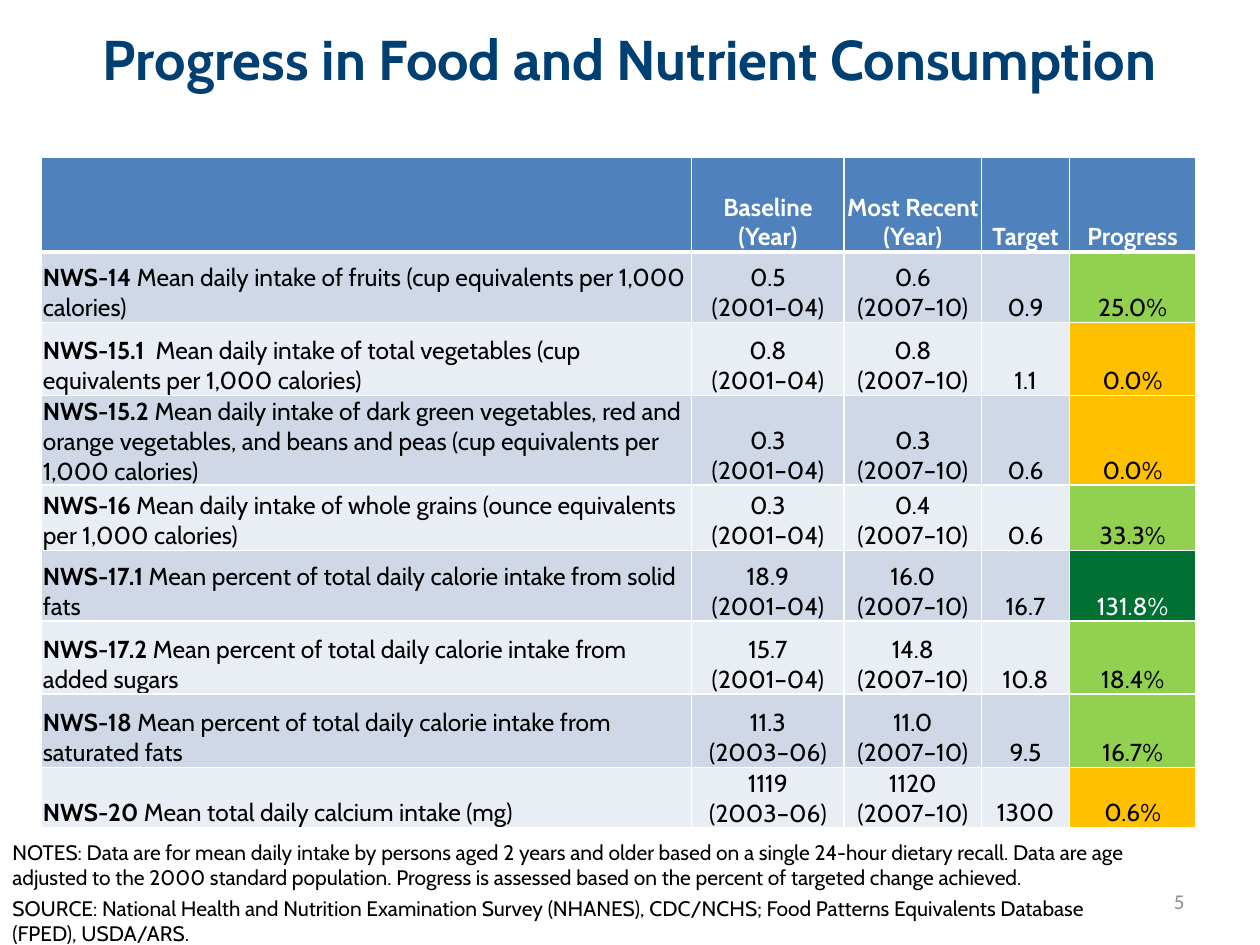
from lxml.etree import SubElement
from pptx import Presentation
from pptx.dml.color import RGBColor
from pptx.enum.text import MSO_ANCHOR, PP_ALIGN
from pptx.oxml.ns import qn
from pptx.util import Inches, Pt

WHITE, BLACK, NAVY, GRAY = "FFFFFF", "000000", "003F72", "8C8C8C"
HEADER_FILL, BANDS = "4F81BD", ("D0D8E8", "E9EDF4")
MET, IMPROVING, LITTLE_CHANGE = "007033", "92D050", "FFC000"

HEADINGS = ["", "Baseline (Year)", "Most Recent (Year)", "Target", "Progress"]
COLUMN_WIDTHS = [5.16, 1.21, 1.09, 0.7, 1]
ROW_HEIGHTS = [0.75, 0.56, 0.58, 0.71, 0.52, 0.56, 0.58, 0.58, 0.48]
RECENT_YEARS = "2007–10"
OBJECTIVES = [
    ("NWS-14", " Mean daily intake of fruits (cup equivalents per 1,000 calories)",
     "0.5", "2001–04", "0.6", "0.9", 25.0),
    ("NWS-15.1 ", " Mean daily intake of total vegetables (cup equivalents per 1,000 calories)",
     "0.8", "2001–04", "0.8", "1.1", 0.0),
    ("NWS-15.2 ", "Mean daily intake of dark green vegetables, red and orange vegetables, "
     "and beans and peas (cup equivalents per 1,000 calories)",
     "0.3", "2001–04", "0.3", "0.6", 0.0),
    ("NWS-16", " Mean daily intake of whole grains (ounce equivalents per 1,000 calories)",
     "0.3", "2001–04", "0.4", "0.6", 33.3),
    ("NWS-17.1", " Mean percent of total daily calorie intake from solid fats",
     "18.9", "2001–04", "16.0", "16.7", 131.8),
    ("NWS-17.2 ", "Mean percent of total daily calorie intake from added sugars",
     "15.7", "2001–04", "14.8", "10.8", 18.4),
    ("NWS-18", " Mean percent of total daily calorie intake from saturated fats",
     "11.3", "2003–06", "11.0", "9.5", 16.7),
    ("NWS-20", " Mean total daily calcium intake (mg)",
     "1119", "2003–06", "1120", "1300", 0.6),
]
NOTES = ("NOTES: Data are for mean daily intake by persons aged 2 years and older based on "
         "a single 24-hour dietary recall. Data are age adjusted to the 2000 standard "
         "population. Progress is assessed based on the percent of targeted change achieved.")
SOURCE = ("SOURCE: National Health and Nutrition Examination Survey (NHANES), CDC/NCHS; "
          "Food Patterns Equivalents Database (FPED), USDA/ARS.")


def color(value):
    return RGBColor.from_string(value)


def progress_fill(percent):
    if percent >= 100:
        return MET
    return IMPROVING if percent >= 10 else LITTLE_CHANGE


class SlideBuilder:
    font_name = "Cabin"

    def __init__(self, page):
        self.page = page

    def style(self, font, size, ink, bold=False, name=None):
        font.name = name or self.font_name
        font.size = Pt(size)
        font.bold = bold
        font.color.rgb = color(ink)

    def text(self, words, place, size, ink=BLACK, bold=False, name=None,
             align=PP_ALIGN.LEFT, anchor=MSO_ANCHOR.TOP):
        box = self.page.shapes.add_textbox(*map(Inches, place))
        frame = box.text_frame
        frame.word_wrap = True
        frame.vertical_anchor = anchor
        para = frame.paragraphs[0]
        para.text = words
        para.alignment = align
        self.style(para.font, size, ink, bold, name)

    def table(self, place, widths, heights):
        table = self.page.shapes.add_table(
            len(heights), len(widths), *map(Inches, place)).table
        for column, width in zip(table.columns, widths):
            column.width = Inches(width)
        for row, height in zip(table.rows, heights):
            row.height = Inches(height)
        return table

    def cell(self, cell, lines, fill, ink=BLACK, bold=False,
             align=PP_ALIGN.CENTER, top=1, bottom=1):
        cell.margin_left = cell.margin_right = cell.margin_top = Inches(0.01)
        cell.margin_bottom = 0
        cell.vertical_anchor = MSO_ANCHOR.BOTTOM
        self.borders(cell, top, bottom)
        cell.fill.solid()
        cell.fill.fore_color.rgb = color(fill)
        frame = cell.text_frame
        for index, line in enumerate(lines):
            para = frame.add_paragraph() if index else frame.paragraphs[0]
            para.text = line
            para.alignment = align
            self.style(para.font, 14, ink, bold)

    def label(self, cell, code, description, fill, top):
        self.cell(cell, [""], fill, align=PP_ALIGN.LEFT, top=top)
        para = cell.text_frame.paragraphs[0]
        for words, bold in ((code, True), (description, False)):
            span = para.add_run()
            span.text = words
            span.font.bold = bold

    def borders(self, cell, top, bottom):
        properties = cell._tc.get_or_add_tcPr()
        for side, width in (("L", 1), ("R", 1), ("T", top), ("B", bottom)):
            line = SubElement(properties, qn(f"a:ln{side}"), w=str(Pt(width)))
            paint = SubElement(line, qn("a:solidFill"))
            SubElement(paint, qn("a:srgbClr"), val=WHITE)


def main():
    deck = Presentation()
    deck.slide_width, deck.slide_height = Inches(10), Inches(7.5)
    builder = SlideBuilder(deck.slides.add_slide(deck.slide_layouts[6]))

    builder.text("Progress in Food and Nutrient Consumption", (0, 0, 10, 0.92), 32, NAVY,
                 bold=True, align=PP_ALIGN.CENTER, anchor=MSO_ANCHOR.MIDDLE)
    builder.text("5", (7.17, 6.95, 2.33, 0.4), 12, GRAY, name="Calibri",
                 align=PP_ALIGN.RIGHT, anchor=MSO_ANCHOR.MIDDLE)

    table = builder.table((0.33, 1.25, 9.17, 5.33), COLUMN_WIDTHS, ROW_HEIGHTS)
    for column, heading in enumerate(HEADINGS):
        builder.cell(table.cell(0, column), [heading], HEADER_FILL, WHITE, True, bottom=3)
    for row, objective in enumerate(OBJECTIVES, 1):
        code, description, baseline, years, recent, target, percent = objective
        band = BANDS[(row - 1) % 2]
        top = 3 if row == 1 else 1
        builder.label(table.cell(row, 0), code, description, band, top)
        values = [[baseline, f"({years})"], [recent, f"({RECENT_YEARS})"], [target]]
        for column, lines in enumerate(values, 1):
            builder.cell(table.cell(row, column), lines, band, top=top)
        fill = progress_fill(percent)
        builder.cell(table.cell(row, 4), [f"{percent:.1f}%"], fill,
                     WHITE if fill == MET else BLACK, top=top)

    builder.text(NOTES, (0, 6.24, 9.33, 0.87), 12, anchor=MSO_ANCHOR.BOTTOM)
    builder.text(SOURCE, (0, 7.06, 8.83, 0.28), 12)
    deck.save("out.pptx")


if __name__ == "__main__":
    main()
